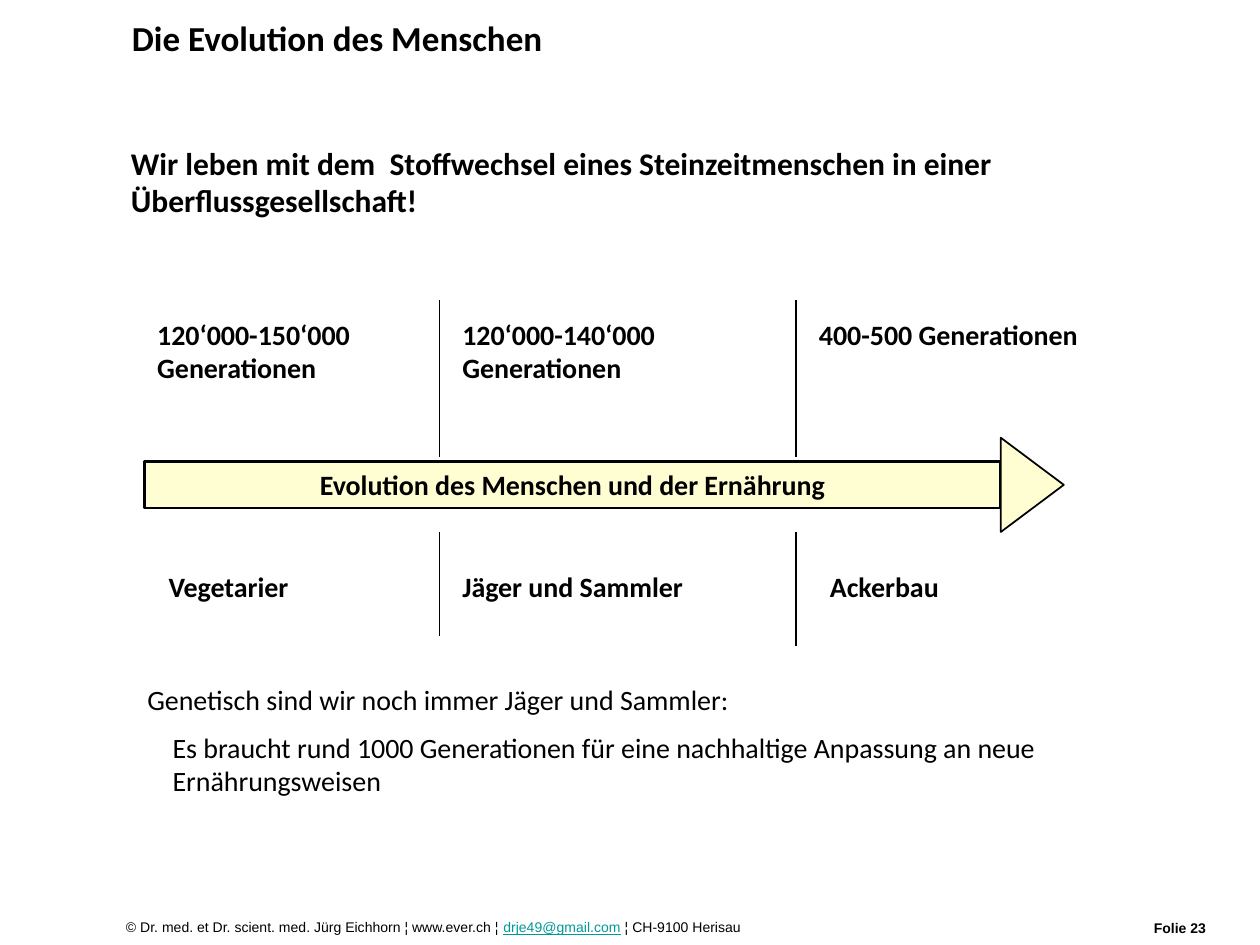
from lxml.etree import SubElement
from pptx import Presentation
from pptx.dml.color import RGBColor
from pptx.enum.shapes import MSO_CONNECTOR, MSO_SHAPE
from pptx.enum.text import MSO_ANCHOR, PP_ALIGN
from pptx.oxml.ns import qn
from pptx.util import Cm, Pt

BLACK = RGBColor(0x00, 0x00, 0x00)
CREAM = RGBColor(0xFF, 0xFE, 0xD2)
TEAL = RGBColor(0x00, 0x99, 0x99)

BAR_LEFT, BAR_TOP, BAR_WIDTH, BAR_HEIGHT = 2.92, 9.3, 17.25, 0.94
GENERATIONS_TOP, DIETS_TOP = 6.27, 11.35
# generations, their left, width and height; diet, its left and width
ERAS = [
    ("120‘000-150‘000 Generationen", 2.92, 6.35, 1.63, "Vegetarier", 3.15, 5.82),
    ("120‘000-140‘000 Generationen", 9.07, 6.88, 1.63, "Jäger und Sammler", 9.07, 7.42),
    ("400-500 Generationen", 16.26, 6.45, 0.94, "Ackerbau", 16.48, 6.25),
]
# position of each divider and the lower end of its bottom part
DIVIDERS = [(8.86, 12.83), (16.05, 13.03)]


def style(paragraph, size, bold=False, font_name="Calibri"):
    font = paragraph.font
    font.name, font.size, font.bold = font_name, Pt(size), bold
    font.color.rgb = BLACK


def add_text(slide, text, left, top, width, height, size, bold=True, font_name="Calibri"):
    """Add a wrapping text box and return its text frame."""
    frame = slide.shapes.add_textbox(Cm(left), Cm(top), Cm(width), Cm(height)).text_frame
    frame.word_wrap = True
    frame.text = text
    style(frame.paragraphs[0], size, bold, font_name)
    return frame


def add_filled_shape(slide, kind, left, top, width, height, line_width):
    shape = slide.shapes.add_shape(kind, Cm(left), Cm(top), Cm(width), Cm(height))
    shape.shadow.inherit = False
    shape.fill.solid()
    shape.fill.fore_color.rgb = CREAM
    shape.line.color.rgb = BLACK
    shape.line.width = Pt(line_width)
    return shape


def add_divider(slide, x, top, bottom):
    line = slide.shapes.add_connector(MSO_CONNECTOR.STRAIGHT, Cm(x), Cm(top), Cm(x), Cm(bottom))
    line.line.color.rgb = BLACK
    line.line.width = Pt(1)
    SubElement(line._element.spPr, qn("a:effectLst"))


def add_arrow(slide):
    bar = add_filled_shape(slide, MSO_SHAPE.RECTANGLE, BAR_LEFT, BAR_TOP, BAR_WIDTH, BAR_HEIGHT, 1.5)
    bar.text_frame.text = "Evolution des Menschen und der Ernährung"
    paragraph = bar.text_frame.paragraphs[0]
    paragraph.alignment = PP_ALIGN.CENTER
    style(paragraph, 16, bold=True)
    head = add_filled_shape(slide, MSO_SHAPE.FLOWCHART_EXTRACT, 19.86, 9.14, 1.9, 1.27, 1)
    head.rotation = 90


def add_timeline(slide):
    add_arrow(slide)
    for generations, left, width, height, diet, diet_left, diet_width in ERAS:
        add_text(slide, generations, left, GENERATIONS_TOP, width, height, 16)
        add_text(slide, diet, diet_left, DIETS_TOP, diet_width, 0.94, 16)
    for x, bottom in DIVIDERS:
        add_divider(slide, x, 6.05, 9.22)
        add_divider(slide, x, 10.72, bottom)


def add_conclusion(slide):
    frame = add_text(slide, "Genetisch sind wir noch immer Jäger und Sammler:",
                     2.72, 13.64, 21.84, 2.64, 16, bold=False)
    detail = frame.add_paragraph()
    detail.text = ("Es braucht rund 1000 Generationen für eine nachhaltige "
                   "Anpassung an neue Ernährungsweisen")
    detail.space_before = Pt(8)
    detail._p.get_or_add_pPr().set("marL", str(Cm(0.51)))
    style(detail, 16)


def add_footer(slide):
    frame = add_text(slide, "© Dr. med. et Dr. scient. med. Jürg Eichhorn ¦ www.ever.ch ¦ ",
                     2.29, 18.39, 20.6, 0.58, 8, bold=False, font_name="Arial")
    paragraph = frame.paragraphs[0]
    address = paragraph.add_run()
    address.text = "drje49@gmail.com"
    address.font.color.rgb = TEAL
    address.font.underline = True
    paragraph.add_run().text = " ¦ CH-9100 Herisau"
    add_text(slide, "Folie 23", 23.01, 18.41, 2.39, 0.58, 8, font_name="Arial")


def main():
    presentation = Presentation()
    presentation.slide_width, presentation.slide_height = Cm(25.4), Cm(19.05)
    slide = presentation.slides.add_slide(presentation.slide_layouts[6])
    title = add_text(slide, "Die Evolution des Menschen", 2.41, 0.13, 16.31, 1.27, 20)
    title.vertical_anchor = MSO_ANCHOR.MIDDLE
    add_text(slide, "Wir leben mit dem  Stoffwechsel eines Steinzeitmenschen in einer "
             "Überflussgesellschaft!", 2.39, 2.77, 21.84, 14.6, 18)
    add_timeline(slide)
    add_conclusion(slide)
    add_footer(slide)
    presentation.save("out.pptx")


if __name__ == "__main__":
    main()
